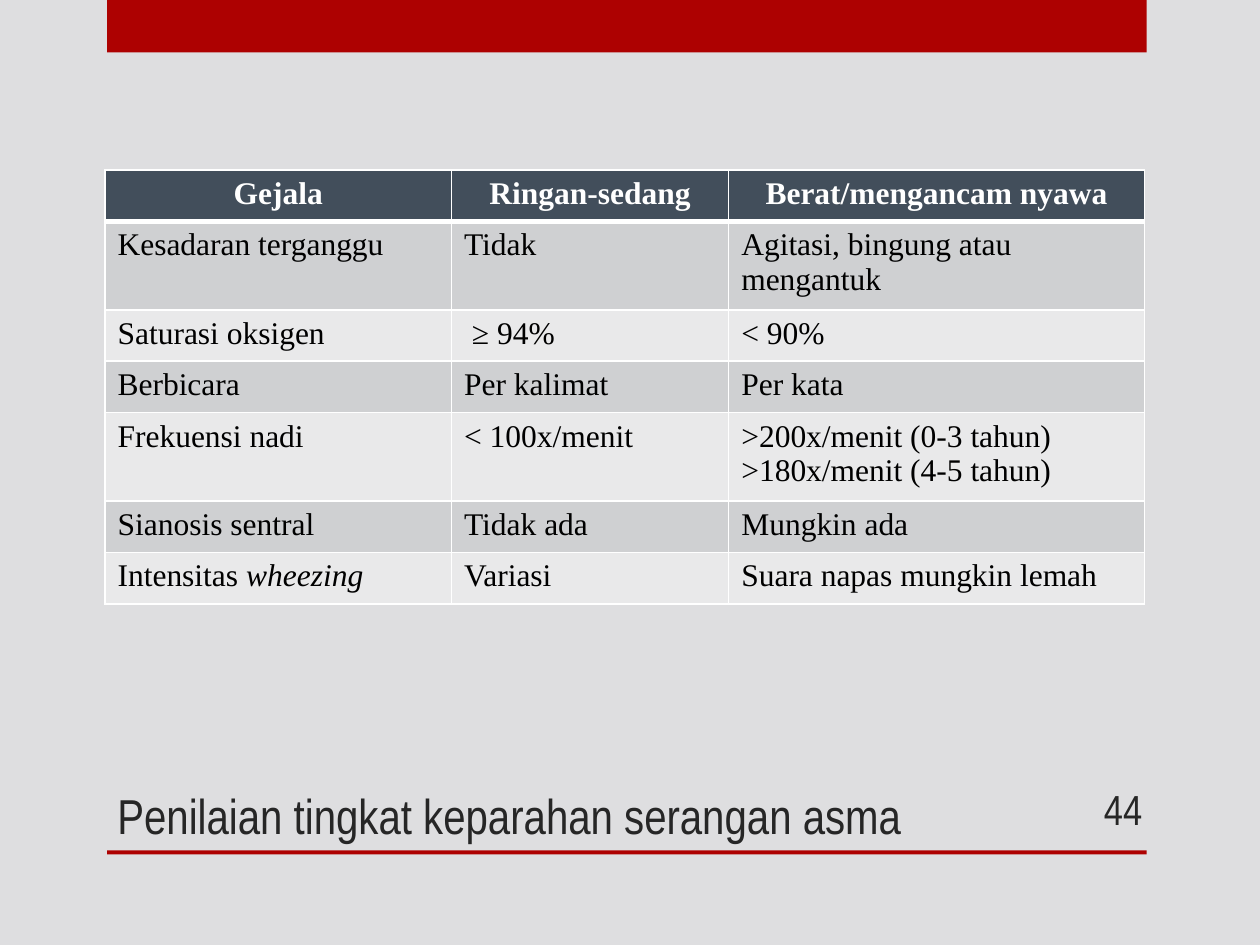
import pptx
import pptx.util
import pptx.dml.color
import pptx.enum.shapes
import pptx.enum.text
import pptx.oxml
import pptx.oxml.ns
from lxml import etree

Pt = pptx.util.Pt
ALIGN = pptx.enum.text.PP_ALIGN
ANCHOR = pptx.enum.text.MSO_ANCHOR

TITLE = "Penilaian tingkat keparahan serangan asma"
PAGE = "44"
HEADER = ["Gejala", "Ringan-sedang", "Berat/mengancam nyawa"]
ROWS = [
    ["Kesadaran terganggu", "Tidak", "Agitasi, bingung atau mengantuk"],
    ["Saturasi oksigen", " ≥ 94%", "< 90%"],
    ["Berbicara", "Per kalimat", "Per kata"],
    ["Frekuensi nadi", "< 100x/menit", ">200x/menit (0-3 tahun)\n>180x/menit (4-5 tahun)"],
    ["Sianosis sentral", "Tidak ada", "Mungkin ada"],
    ["Intensitas *wheezing*", "Variasi", "Suara napas mungkin lemah"],
]
COL_WIDTHS = [198, 158.4, 237.6]
ROW_HEIGHT = 29.4
BARS = [(61.2, 0, 594, 30), (61.2, 486, 594, 2.2)]
RED, INK, WHITE, BLACK = "AD0101", "262626", "FFFFFF", "000000"
HEADER_FILL, BANDS = "424E5B", ["CFD0D2", "E9E9EA"]


def rgb(value):
    return pptx.dml.color.RGBColor.from_string(value)


def paint(target, color):
    target.fill.solid()
    target.fill.fore_color.rgb = rgb(color)


def write(tf, text, font, size, color, align=ALIGN.LEFT, bold=False):
    for i, line in enumerate(text.split("\n")):
        p = tf.add_paragraph() if i else tf.paragraphs[0]
        p.alignment = align
        for j, part in enumerate(line.split("*")):
            if part:
                r = p.add_run()
                r.text = part
                r.font.name = font
                r.font.size = Pt(size)
                r.font.bold = bold
                r.font.italic = j % 2 == 1
                r.font.color.rgb = rgb(color)


def add_label(s, box, text, size, align, anchor):
    tf = s.shapes.add_textbox(*map(Pt, box)).text_frame
    tf.word_wrap = True
    tf.vertical_anchor = anchor
    write(tf, text, "Arial Narrow", size, INK, align)


def set_borders(cell, bottom):
    tcPr = cell._tc.get_or_add_tcPr()
    for i, (side, width) in enumerate([("L", 1), ("R", 1), ("T", 1), ("B", bottom)]):
        ln = etree.Element(pptx.oxml.ns.qn("a:ln" + side), w=str(Pt(width)))
        fill = etree.SubElement(ln, pptx.oxml.ns.qn("a:solidFill"))
        etree.SubElement(fill, pptx.oxml.ns.qn("a:srgbClr"), val=WHITE)
        tcPr.insert(i, ln)


def add_symptom_table(s):
    rows = [HEADER] + ROWS
    table = s.shapes.add_table(len(rows), len(HEADER), Pt(60), Pt(97.2),
                               Pt(sum(COL_WIDTHS)), Pt(ROW_HEIGHT * len(rows))).table
    for column, width in zip(table.columns, COL_WIDTHS):
        column.width = Pt(width)
    for i, values in enumerate(rows):
        table.rows[i].height = Pt(ROW_HEIGHT)
        head = i == 0
        for j, text in enumerate(values):
            cell = table.cell(i, j)
            paint(cell, HEADER_FILL if head else BANDS[(i - 1) % 2])
            set_borders(cell, 3 if head else 1)
            write(cell.text_frame, text, "Times New Roman", 18, WHITE if head else BLACK,
                  ALIGN.CENTER if head else ALIGN.LEFT, head)


def main():
    prs = pptx.Presentation()
    prs.slide_width, prs.slide_height = Pt(720), Pt(540)
    s = prs.slides.add_slide(prs.slide_layouts[6])
    paint(s.background, "DEDEE0")
    for box in BARS:
        sp = s.shapes.add_shape(pptx.enum.shapes.MSO_SHAPE.RECTANGLE, *map(Pt, box))
        sp.shadow.inherit = False
        paint(sp, RED)
        sp.line.fill.background()
    add_label(s, (60, 360, 534, 126), TITLE, 28, ALIGN.LEFT, ANCHOR.BOTTOM)
    add_symptom_table(s)
    add_label(s, (600, 448, 59.8, 28.8), PAGE, 24, ALIGN.RIGHT, ANCHOR.MIDDLE)
    prs.save("out.pptx")


if __name__ == "__main__":
    main()
